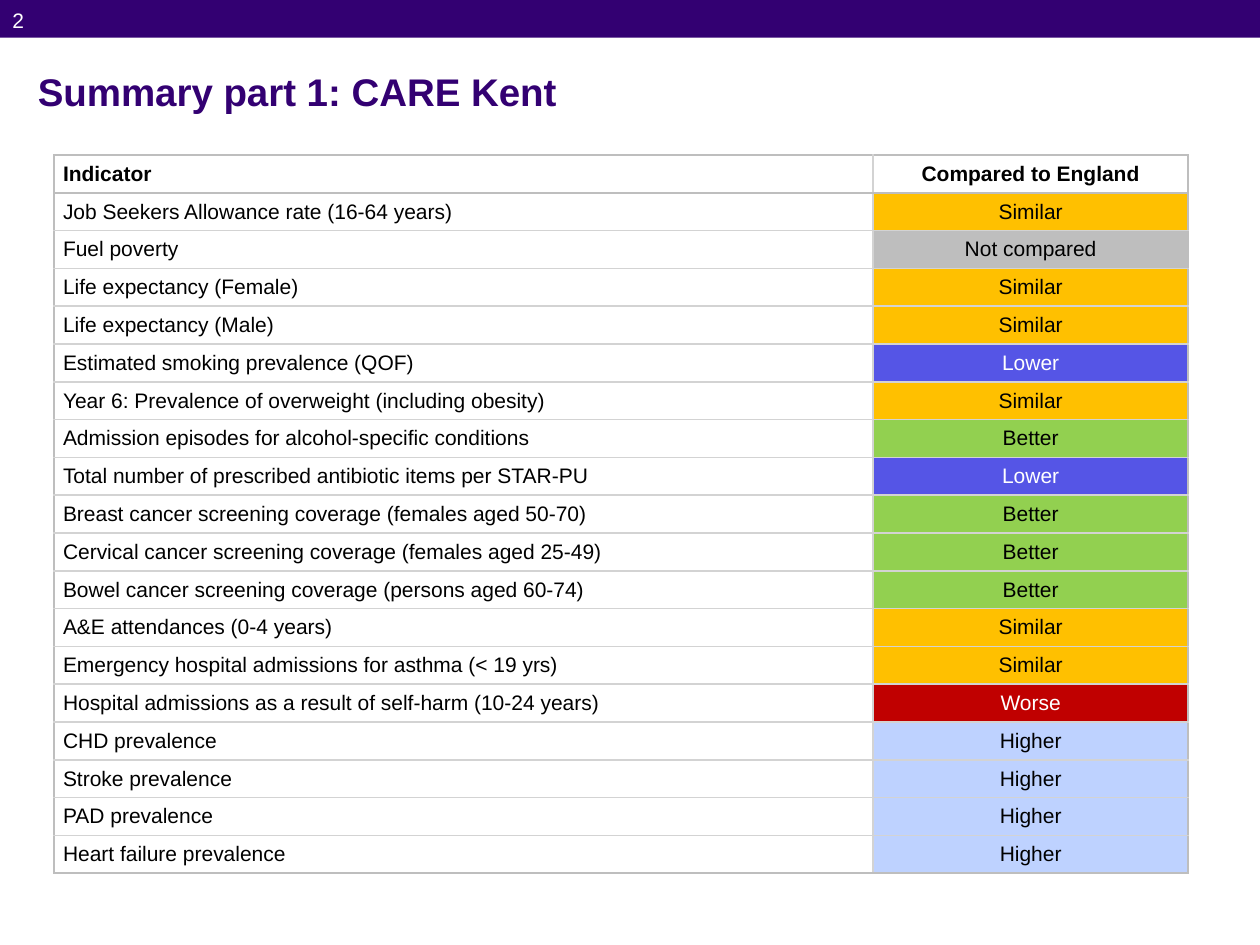
from lxml import etree
from pptx import Presentation
from pptx.dml.color import RGBColor
from pptx.enum.shapes import MSO_SHAPE
from pptx.enum.text import MSO_ANCHOR, PP_ALIGN
from pptx.oxml.ns import qn
from pptx.util import Inches, Pt

RECTANGLE = MSO_SHAPE.RECTANGLE
TOP, MIDDLE = MSO_ANCHOR.TOP, MSO_ANCHOR.MIDDLE
LEFT, CENTER = PP_ALIGN.LEFT, PP_ALIGN.CENTER

COLORS = {
    "purple": "330072",
    "white": "FFFFFF",
    "black": "000000",
    "outer": "BEBEBE",
    "inner": "D3D3D3",
    "Similar": "FFC000",
    "Not compared": "BEBEBE",
    "Lower": "5555E6",
    "Better": "92D050",
    "Worse": "C00000",
    "Higher": "BED2FF",
}
LIGHT_TEXT = ("Lower", "Worse")

ROWS = [
    ("Indicator", "Compared to England"),
    ("Job Seekers Allowance rate (16-64 years)", "Similar"),
    ("Fuel poverty", "Not compared"),
    ("Life expectancy (Female)", "Similar"),
    ("Life expectancy (Male)", "Similar"),
    ("Estimated smoking prevalence (QOF)", "Lower"),
    ("Year 6: Prevalence of overweight (including obesity)", "Similar"),
    ("Admission episodes for alcohol-specific conditions", "Better"),
    ("Total number of prescribed antibiotic items per STAR-PU", "Lower"),
    ("Breast cancer screening coverage (females aged 50-70)", "Better"),
    ("Cervical cancer screening coverage (females aged 25-49)", "Better"),
    ("Bowel cancer screening coverage (persons aged 60-74)", "Better"),
    ("A&E attendances (0-4 years)", "Similar"),
    ("Emergency hospital admissions for asthma (< 19 yrs)", "Similar"),
    ("Hospital admissions as a result of self-harm (10-24 years)", "Worse"),
    ("CHD prevalence", "Higher"),
    ("Stroke prevalence", "Higher"),
    ("PAD prevalence", "Higher"),
    ("Heart failure prevalence", "Higher"),
]
COLUMN_WIDTHS = (6.5, 2.5)
ROW_HEIGHT = 0.3


def format_text(para, size, color, bold=False):
    for span in para.runs:
        span.font.name = "Arial"
        span.font.size = Pt(size)
        span.font.bold = bold
        span.font.color.rgb = RGBColor.from_string(COLORS[color])


def add_border(cell, side, color):
    properties = cell._tc.get_or_add_tcPr()
    line = etree.SubElement(properties, qn(f"a:ln{side}"), w=str(Pt(1)))
    fill = etree.SubElement(line, qn("a:solidFill"))
    etree.SubElement(fill, qn("a:srgbClr"), val=COLORS[color])


deck = Presentation()
deck.slide_width, deck.slide_height = Inches(10), Inches(7.5)
page = deck.slides.add_slide(deck.slide_layouts[5])

banner = page.shapes.add_shape(RECTANGLE, 0, 0, Inches(10), Inches(0.3))
banner.shadow.inherit = False
banner.fill.solid()
banner.fill.fore_color.rgb = RGBColor.from_string(COLORS["purple"])
banner.line.fill.background()

title = page.shapes.title
title.left, title.top = Inches(0.2), Inches(0.47)
title.width, title.height = Inches(9.61), Inches(0.45)
title.text_frame.text = "Summary part 1: CARE Kent"
title.text_frame.vertical_anchor = MIDDLE
title.text_frame.margin_top = Inches(0.08)
title.text_frame.margin_bottom = Inches(0.02)
title.text_frame.paragraphs[0].alignment = LEFT
format_text(title.text_frame.paragraphs[0], 22, "purple", True)

number_box = page.shapes.add_textbox(0, 0, Inches(0.63), Inches(0.63))
number_box.text_frame.word_wrap = True
number_box.text_frame.vertical_anchor = TOP
number_box.text_frame.margin_top = Inches(0.06)
number_box.text_frame.text = "2"
format_text(number_box.text_frame.paragraphs[0], 12, "white")

table = page.shapes.add_table(
    len(ROWS), len(COLUMN_WIDTHS), Inches(0.43), Inches(1.23),
    Inches(sum(COLUMN_WIDTHS)), Inches(ROW_HEIGHT * len(ROWS)),
).table
table.first_row = False
table.horz_banding = False
for column, width in zip(table.columns, COLUMN_WIDTHS):
    column.width = Inches(width)

last = len(ROWS) - 1
for row_index, row in enumerate(ROWS):
    table.rows[row_index].height = Inches(ROW_HEIGHT)
    header = row_index == 0
    for column_index, text in enumerate(row):
        cell = table.cell(row_index, column_index)
        cell.margin_left = cell.margin_right = 0
        cell.margin_top = cell.margin_bottom = 0
        cell.vertical_anchor = MIDDLE
        cell.text_frame.text = text
        para = cell.text_frame.paragraphs[0]
        para.alignment = CENTER if column_index else LEFT
        para.space_before = para.space_after = Pt(5)
        indent = para._p.get_or_add_pPr()
        indent.set("marL", str(Inches(0.07)))
        indent.set("marR", str(Inches(0.07)))
        format_text(para, 12, "white" if text in LIGHT_TEXT else "black", header)

        add_border(cell, "L", "inner" if column_index else "outer")
        add_border(cell, "R", "outer" if column_index else "inner")
        add_border(cell, "T", "outer" if row_index <= 1 else "inner")
        add_border(cell, "B", "outer" if row_index in (0, last) else "inner")
        if text in COLORS:
            cell.fill.solid()
            cell.fill.fore_color.rgb = RGBColor.from_string(COLORS[text])
        else:
            cell.fill.background()

deck.save("out.pptx")
